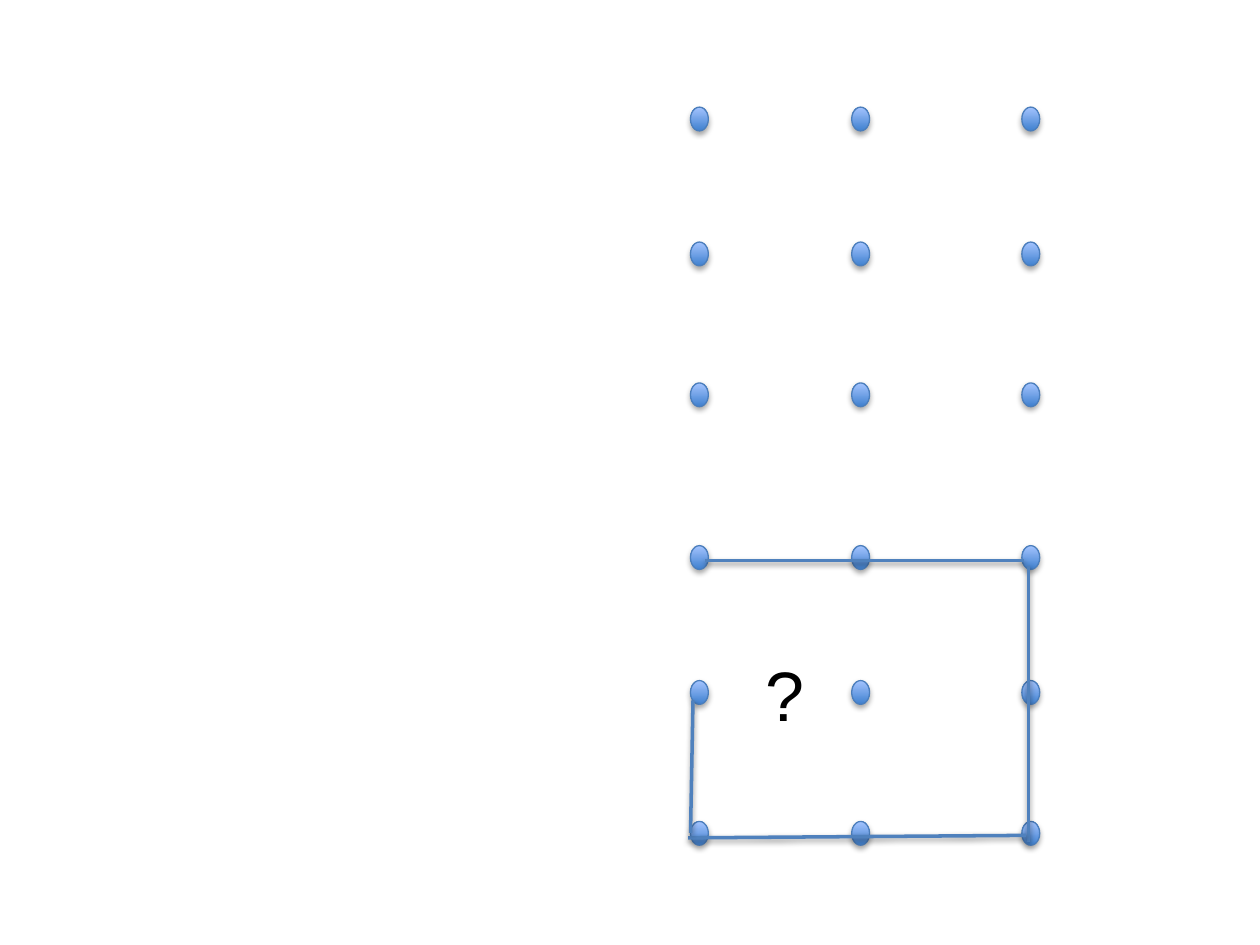
from lxml import etree
from pptx import Presentation
from pptx import util as u
from pptx.dml.color import RGBColor
from pptx.enum import shapes, text
from pptx.oxml.ns import qn


def rgb(value):
    return RGBColor.from_string(value)


def add_shadow(sp, opacity, distance):
    """Give sp a soft black shadow straight below; call after its line is set."""
    sp_pr = sp._element.spPr
    effects = etree.SubElement(sp_pr, qn("a:effectLst"))
    shadow = etree.SubElement(effects, qn("a:outerShdw"), blurRad="40000",
                              dist=str(distance), dir="5400000", rotWithShape="0")
    color = etree.SubElement(shadow, qn("a:srgbClr"), val="000000")
    etree.SubElement(color, qn("a:alpha"), val=str(opacity * 1000))


prs = Presentation()
prs.slide_width, prs.slide_height = u.Cm(25.4), u.Cm(19.05)
s = prs.slides.add_slide(prs.slide_layouts[6])

columns = [13.92, 17.17, 20.6]
rows = [2.16, 4.88, 7.72]
path_points = [
    ((20.73, 11.4), (20.73, 16.97)),
    ((13.87, 16.89), (20.68, 16.84)),
    ((13.92, 16.79), (13.97, 14.12)),
    ((14.22, 11.3), (20.65, 11.3)),
]

# Two nine-dot grids; the lower one carries the attempted solution
for grid_offset in (8.84, 0):
    for y in rows:
        for x in columns:
            dot = s.shapes.add_shape(shapes.MSO_SHAPE.OVAL, u.Cm(x),
                                     u.Cm(y + grid_offset), u.Cm(0.36), u.Cm(0.48))
            dot.fill.gradient()
            dot.fill.gradient_angle = 90
            for stop, color, position in zip(dot.fill.gradient_stops,
                                             ("3F80CE", "A4C4FF"), (0, 1)):
                stop.color.rgb = rgb(color)
                stop.position = position
            dot.line.color.rgb = rgb("4B7EBC")
            dot.line.width = u.Pt(0.75)
            add_shadow(dot, 35, 23000)

    if grid_offset:
        for (x1, y1), (x2, y2) in path_points:
            line = s.shapes.add_connector(shapes.MSO_CONNECTOR.STRAIGHT,
                                          u.Cm(x1), u.Cm(y1), u.Cm(x2), u.Cm(y2))
            line.line.color.rgb = rgb("4F81BD")
            line.line.width = u.Pt(2)
            add_shadow(line, 38, 20000)

question = s.shapes.add_textbox(u.Cm(15.19), u.Cm(13), u.Cm(1.3), u.Cm(1.96))
tf = question.text_frame
tf.word_wrap = False
tf.auto_size = text.MSO_AUTO_SIZE.SHAPE_TO_FIT_TEXT
r = tf.paragraphs[0].add_run()
r.text = "?"
r.font.name = "Arial"
r.font.size = u.Pt(40)
r.font.color.rgb = rgb("000000")

prs.save("out.pptx")
